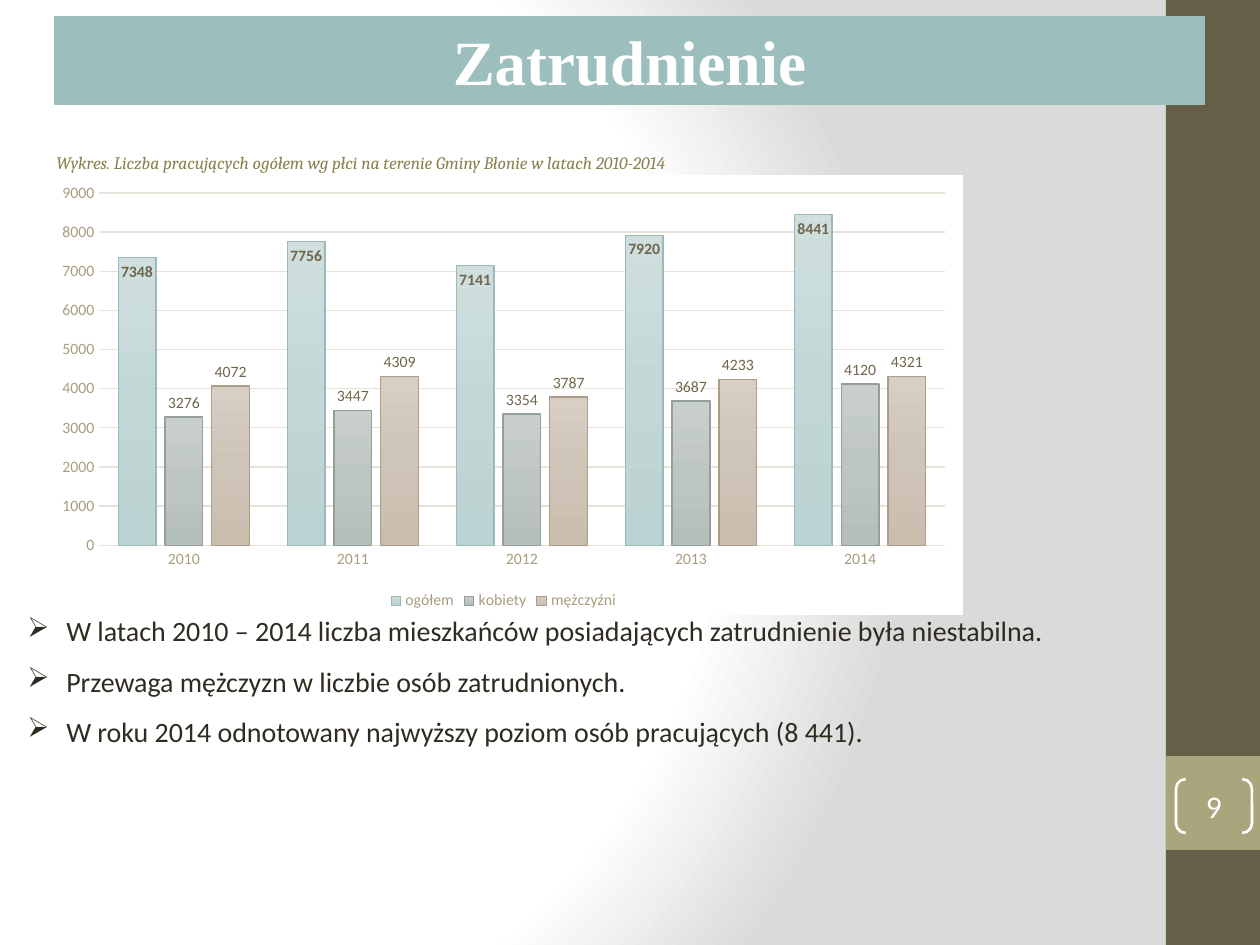
import pptx
import pptx.chart.data
import pptx.dml.color
import pptx.enum.chart
import pptx.enum.shapes
import pptx.enum.text
import pptx.oxml
import pptx.oxml.ns
import pptx.util

EMU_PER_PX = 914400 / 126
COLORS = {
    "white": "FFFFFF", "shade": "DADADA", "sidebar": "675E47", "badge": "A9A57C",
    "banner": "9CBEBD", "ink": "2F2B20", "caption": "89814E",
    "axis": "A89D7F", "grid": "E5E2D9", "label": "6F664C",
}
YEARS = ["2010", "2011", "2012", "2013", "2014"]
# name, values, gradient colours from top to bottom, outline
SERIES = [
    ("ogółem", [7348, 7756, 7141, 7920, 8441], ["CFDFDE", "C3D7D6", "BBD3D2"], "99BAB9"),
    ("kobiety", [3276, 3447, 3354, 3687, 4120], ["C9CFCD", "BEC6C3", "B5BFBA"], "929F9A"),
    ("mężczyźni", [4072, 4309, 3787, 4233, 4321], ["D7CEC4", "CEC4B8", "C9BDAD"], "AD9C86"),
]
BULLETS = [
    "W latach 2010 – 2014 liczba mieszkańców posiadających zatrudnienie była niestabilna.",
    "Przewaga mężczyzn w liczbie osób zatrudnionych.",
    "W roku 2014 odnotowany najwyższy poziom osób pracujących (8 441).",
]
CAPTION = "Wykres. Liczba pracujących ogółem wg płci na terenie Gminy Błonie w latach 2010-2014"
ALIGN = pptx.enum.text.PP_ALIGN
ANCHOR = pptx.enum.text.MSO_ANCHOR
SHAPE = pptx.enum.shapes.MSO_SHAPE
TICK_MARK = pptx.enum.chart.XL_TICK_MARK


def px(value):
    return pptx.util.Emu(round(value * EMU_PER_PX))


def rgb(value):
    return pptx.dml.color.RGBColor.from_string(value)


def apply_format(target, **values):
    for name, value in values.items():
        setattr(target, name, value)


def format_font(font, color, size, name="Calibri", **values):
    apply_format(font, name=name, size=pptx.util.Pt(size), **values)
    font.color.rgb = rgb(color)


def format_line(line, color, width):
    line.color.rgb = rgb(color)
    line.width = pptx.util.Pt(width)


def set_gradient(old_fill, stops, direction):
    """Put a gradient with any number of stops in place of the present fill."""
    stop_list = "".join(
        f'<a:gs pos="{position * 1000}"><a:srgbClr val="{color}"/></a:gs>'
        for position, color in stops
    )
    new_fill = pptx.oxml.parse_xml(
        f'<a:gradFill {pptx.oxml.ns.nsdecls("a")} rotWithShape="1">'
        f"<a:gsLst>{stop_list}</a:gsLst>{direction}</a:gradFill>"
    )
    old_fill.getparent().replace(old_fill, new_fill)


def set_background(slide):
    slide.background.fill.gradient()
    old_fill = next(slide.element.iter(pptx.oxml.ns.qn("a:gradFill")))
    stops = [(0, COLORS["white"]), (75, COLORS["white"]), (100, COLORS["shade"])]
    set_gradient(
        old_fill, stops,
        '<a:path path="circle"><a:fillToRect l="20000" t="50000" r="100000" b="50000"/></a:path>',
    )


def add_block(slide, kind, box, fill=None):
    shape = slide.shapes.add_shape(kind, *map(px, box))
    shape.shadow.inherit = False
    if fill:
        shape.fill.solid()
        shape.fill.fore_color.rgb = rgb(fill)
    else:
        shape.fill.background()
    shape.line.fill.background()
    return shape


def add_page_number(slide, number):
    bracket = add_block(slide, SHAPE.DOUBLE_BRACKET, (1176, 779, 76, 54))
    bracket.adjustments[0] = 0.18
    format_line(bracket.line, COLORS["white"], 1.5)
    frame = bracket.text_frame
    apply_format(frame, margin_left=0, margin_right=0, margin_top=0, margin_bottom=0,
                 vertical_anchor=ANCHOR.MIDDLE, text=number)
    paragraph = frame.paragraphs[0]
    paragraph.alignment = ALIGN.CENTER
    format_font(paragraph.font, COLORS["white"], 18)


def set_title(slide, text):
    title = slide.shapes.title
    apply_format(title, left=px(54), top=px(16), width=px(1151), height=px(89))
    title.fill.solid()
    title.fill.fore_color.rgb = rgb(COLORS["banner"])
    apply_format(title.text_frame, text=text, word_wrap=True, vertical_anchor=ANCHOR.MIDDLE,
                 auto_size=pptx.enum.text.MSO_AUTO_SIZE.NONE)
    paragraph = title.text_frame.paragraphs[0]
    paragraph.alignment = ALIGN.CENTER
    format_font(paragraph.font, COLORS["white"], 36, "Times New Roman", bold=True)
    # The banner lies over the sidebar
    title.element.getparent().append(title.element)


def add_text(slide, box, lines, color, size, **font_values):
    shape = slide.shapes.add_textbox(*map(px, box))
    frame = shape.text_frame
    apply_format(frame, word_wrap=True, text="\n".join(lines))
    for paragraph in frame.paragraphs:
        apply_format(paragraph, alignment=ALIGN.JUSTIFY, line_spacing=1.5)
        format_font(paragraph.runs[0].font, color, size, **font_values)
    return shape


def add_bullets(shape, character, indent):
    for properties in shape.element.iter(pptx.oxml.ns.qn("a:pPr")):
        properties.set("marL", str(px(indent)))
        properties.set("indent", str(-px(indent)))
        properties.append(pptx.oxml.parse_xml(
            f'<a:buChar {pptx.oxml.ns.nsdecls("a")} char="{character}"/>'))


def format_axes(chart):
    for axis in (chart.category_axis, chart.value_axis):
        apply_format(axis, major_tick_mark=TICK_MARK.NONE, minor_tick_mark=TICK_MARK.NONE)
        format_font(axis.tick_labels.font, COLORS["axis"], 9)
    format_line(chart.category_axis.format.line, COLORS["grid"], 0.75)
    value_axis = chart.value_axis
    apply_format(value_axis, minimum_scale=0, maximum_scale=9000, major_unit=1000)
    value_axis.format.line.fill.background()
    format_line(value_axis.major_gridlines.format.line, COLORS["grid"], 0.75)


def format_series(chart):
    for series, (_, _, _, outline) in zip(chart.plots[0].series, SERIES):
        series.format.fill.gradient()
        format_line(series.format.line, outline, 0.75)
        series.data_labels.show_value = True
        format_font(series.data_labels.font, COLORS["label"], 9)
    total_labels = chart.plots[0].series[0].data_labels
    total_labels.position = pptx.enum.chart.XL_LABEL_POSITION.INSIDE_END
    total_labels.font.bold = True
    old_fills = list(chart.element.iter(pptx.oxml.ns.qn("a:gradFill")))
    for old_fill, (_, _, colors, _) in zip(old_fills, SERIES):
        set_gradient(old_fill, zip((0, 50, 100), colors), '<a:lin ang="5400000" scaled="0"/>')


def add_employment_chart(slide, box):
    data = pptx.chart.data.CategoryChartData()
    data.categories = YEARS
    for name, values, _, _ in SERIES:
        data.add_series(name, values)
    chart = slide.shapes.add_chart(
        pptx.enum.chart.XL_CHART_TYPE.COLUMN_CLUSTERED, *map(px, box), data).chart
    apply_format(chart, has_title=False, has_legend=True)
    format_font(chart.font, COLORS["ink"], 10)
    apply_format(chart.legend, include_in_layout=False,
                 position=pptx.enum.chart.XL_LEGEND_POSITION.BOTTOM)
    format_font(chart.legend.font, COLORS["axis"], 9)
    apply_format(chart.plots[0], gap_width=100, overlap=-24, vary_by_categories=False)
    format_axes(chart)
    format_series(chart)
    # White chart area without a border
    chart.element.find(pptx.oxml.ns.qn("c:chart")).addnext(pptx.oxml.parse_xml(
        f'<c:spPr {pptx.oxml.ns.nsdecls("c", "a")}><a:solidFill><a:srgbClr val="{COLORS["white"]}"/>'
        "</a:solidFill><a:ln><a:noFill/></a:ln></c:spPr>"))


def main():
    presentation = pptx.Presentation()
    apply_format(presentation, slide_width=px(1260), slide_height=px(945))
    slide = presentation.slides.add_slide(presentation.slide_layouts[5])
    set_background(slide)
    # Sidebar with the page number
    add_block(slide, SHAPE.RECTANGLE, (1166, 0, 94, 945), COLORS["sidebar"])
    add_block(slide, SHAPE.RECTANGLE, (1166, 756, 94, 94), COLORS["badge"])
    add_page_number(slide, "9")
    set_title(slide, "Zatrudnienie")
    # Findings, chart caption and chart
    findings = add_text(slide, (15, 591, 1131, 165), BULLETS, COLORS["ink"], 16)
    add_bullets(findings, "➢", 39)
    add_text(slide, (44, 135, 742, 44), [CAPTION], COLORS["caption"], 10,
             name="Cambria", italic=True)
    add_employment_chart(slide, (44, 175, 919, 440))
    presentation.save("out.pptx")


if __name__ == "__main__":
    main()
